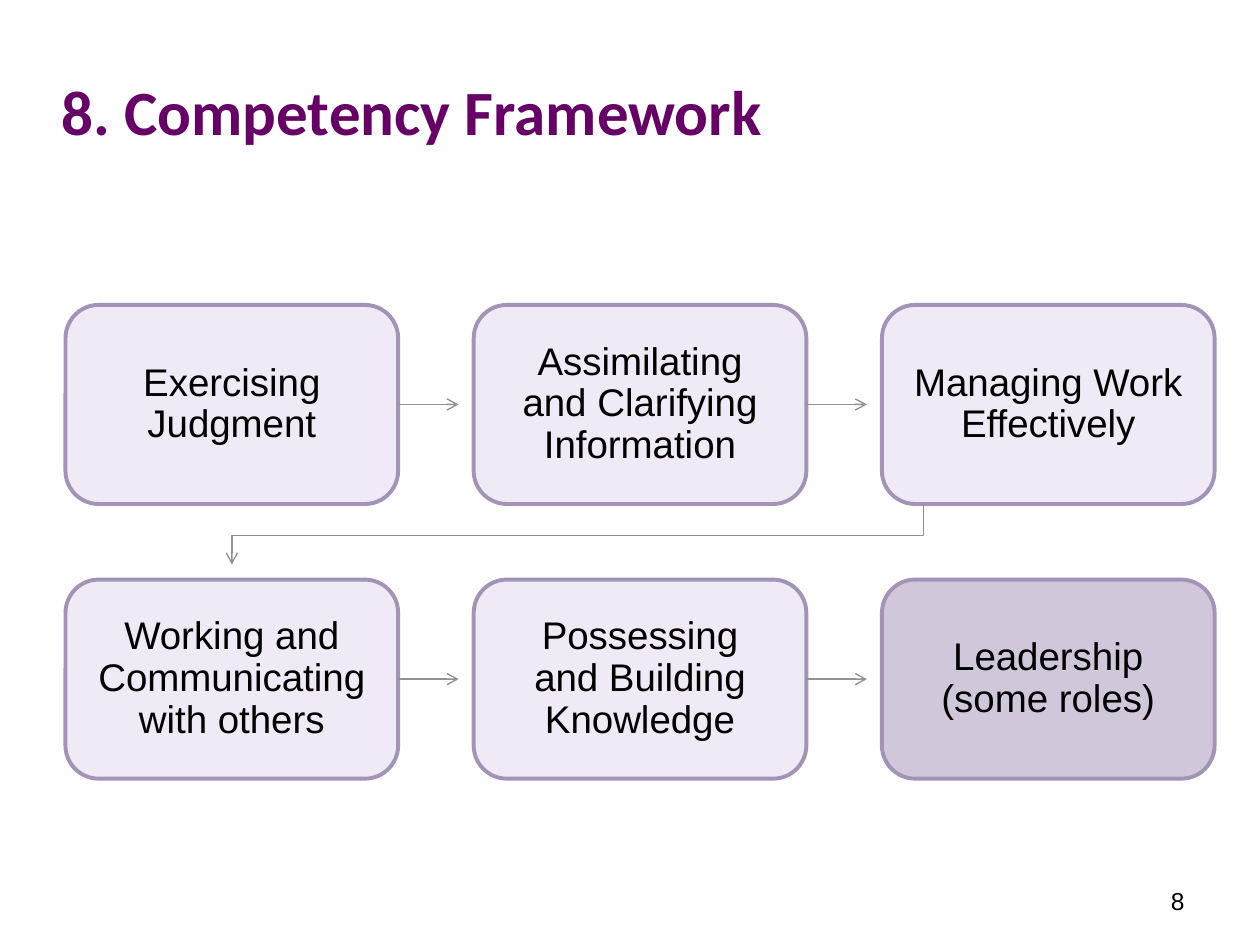
from lxml import etree
from pptx import Presentation
from pptx import util as u
from pptx.dml.color import RGBColor
from pptx.enum import shapes, text
from pptx.oxml import ns

TITLE = "8. Competency Framework"
PAGE_NUMBER = "8"
COMPETENCIES = [
    ("Exercising Judgment", "core"),
    ("Assimilating and Clarifying Information", "core"),
    ("Managing Work Effectively", "core"),
    ("Working and Communicating with others", "core"),
    ("Possessing and Building Knowledge", "core"),
    ("Leadership (some roles)", "optional"),
]
COLORS = {
    "title": "660066",
    "text": "000000",
    "core": "E0D7ED",
    "optional": "A293B7",
    "border": "A293B7",
    "arrow": "919191",
}
COLUMNS = 3
LEFT, TOP = 0.52, 2.42
BOX_WIDTH, BOX_HEIGHT = 2.64, 1.58
COLUMN_STEP, ROW_STEP = 3.24, 2.18
ARROW_LENGTH = 0.48
TURN_OFFSET, TURN_DROP = 0.33, 0.25


def color(name):
    return RGBColor.from_string(COLORS[name])


def write(frame, words, size, font, tint, align, bold=False, inset=None):
    frame.word_wrap = True
    frame.vertical_anchor = text.MSO_ANCHOR.MIDDLE
    if inset is not None:
        frame.margin_left = frame.margin_right = u.Inches(inset)
        frame.margin_top = frame.margin_bottom = u.Inches(inset)
    para = frame.paragraphs[0]
    para.alignment = align
    span = para.add_run()
    span.text = words
    span.font.size = u.Pt(size)
    span.font.name = font
    span.font.bold = bold
    span.font.color.rgb = color(tint)
    return para


def add_label(page, area, *style, **options):
    label = page.shapes.add_textbox(*map(u.Inches, area))
    write(label.text_frame, *style, **options)


def add_box(page, left, top, words, kind):
    box = page.shapes.add_shape(
        shapes.MSO_SHAPE.ROUNDED_RECTANGLE,
        *map(u.Inches, (left, top, BOX_WIDTH, BOX_HEIGHT)))
    box.shadow.inherit = False
    box.fill.solid()
    box.fill.fore_color.rgb = color(kind)
    tint = box.fill._xPr.find(".//" + ns.qn("a:srgbClr"))
    etree.SubElement(tint, ns.qn("a:alpha"), val="50000")
    box.line.color.rgb = color("border")
    box.line.width = u.Pt(2.25)
    para = write(box.text_frame, words, 22, "Arial", "text",
                 text.PP_ALIGN.CENTER, inset=0.17)
    para.line_spacing = 0.9
    return box


def style_arrow(arrow):
    arrow.line.color.rgb = color("arrow")
    arrow.line.width = u.Pt(0.79)
    etree.SubElement(arrow.line._get_or_add_ln(), ns.qn("a:tailEnd"), type="arrow")
    etree.SubElement(arrow._element.spPr, ns.qn("a:effectLst"))


def add_step_arrow(page, box):
    start = box.left + box.width
    middle = box.top + box.height // 2
    arrow = page.shapes.add_connector(
        shapes.MSO_CONNECTOR.STRAIGHT,
        start, middle, start + u.Inches(ARROW_LENGTH), middle)
    arrow.begin_connect(box, 3)
    style_arrow(arrow)


def add_turn_arrow(page, last, first):
    start = last.left + u.Inches(TURN_OFFSET)
    bottom = last.top + last.height
    bend = bottom + u.Inches(TURN_DROP)
    end = first.left + first.width // 2
    outline = page.shapes.build_freeform(start, bottom)
    outline.add_line_segments(
        [(start, bend), (end, bend), (end, bottom + u.Inches(ARROW_LENGTH))],
        close=False)
    arrow = outline.convert_to_shape()
    arrow.fill.background()
    style_arrow(arrow)


def main():
    deck = Presentation()
    deck.slide_width, deck.slide_height = u.Inches(10), u.Inches(7.5)
    page = deck.slides.add_slide(deck.slide_layouts[6])
    add_label(page, (0.39, 0.45, 9.26, 0.85), TITLE, 36, "Calibri", "title",
              text.PP_ALIGN.LEFT, bold=True)
    add_label(page, (7.17, 6.95, 2.33, 0.4), PAGE_NUMBER, 14, "Arial", "text",
              text.PP_ALIGN.RIGHT)

    boxes = []
    for index, (words, kind) in enumerate(COMPETENCIES):
        row, column = divmod(index, COLUMNS)
        boxes.append(add_box(page, LEFT + column * COLUMN_STEP,
                             TOP + row * ROW_STEP, words, kind))
    for box, following in zip(boxes, boxes[1:]):
        if box.top == following.top:
            add_step_arrow(page, box)
        else:
            add_turn_arrow(page, box, following)
    deck.save("out.pptx")


if __name__ == "__main__":
    main()
